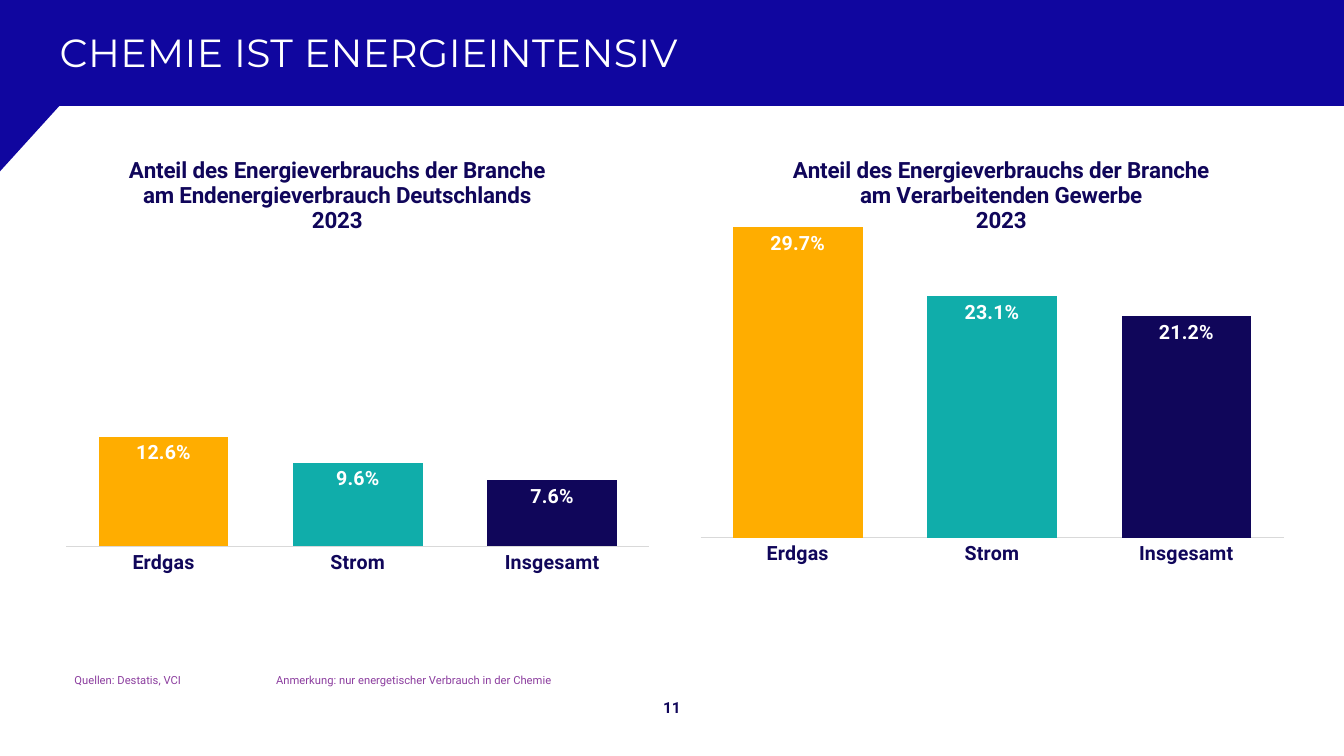
from lxml import etree
from pptx import Presentation
from pptx.chart.data import CategoryChartData
from pptx.dml.color import RGBColor
from pptx.enum.chart import XL_CHART_TYPE as ChartType
from pptx.enum.chart import XL_LABEL_POSITION as LabelPosition
from pptx.enum.chart import XL_TICK_MARK as TickMark
from pptx.enum.text import MSO_ANCHOR as Anchor
from pptx.enum.text import PP_ALIGN as Align
from pptx.oxml.ns import qn
from pptx.util import Inches, Pt

NAVY, BLUE, WHITE = "10065A", "10069F", "FFFFFF"
BAR_COLORS = ["FFAD00", "10ADAA", NAVY]
CATEGORIES = ["Erdgas", "Strom", "Insgesamt"]


def color(value):
    return RGBColor.from_string(value)


def set_layout(parent, position, **fractions):
    """Place a chart part by fractions of the chart area."""
    for old in parent.findall(qn("c:layout")):
        parent.remove(old)
    layout = etree.Element(qn("c:layout"))
    parent.insert(position, layout)
    manual = etree.SubElement(layout, qn("c:manualLayout"))
    if "w" in fractions:
        etree.SubElement(manual, qn("c:layoutTarget")).set("val", "inner")
    for side in "xy":
        etree.SubElement(manual, qn(f"c:{side}Mode")).set("val", "edge")
    for name, fraction in fractions.items():
        etree.SubElement(manual, qn(f"c:{name}")).set("val", str(fraction))


class EnergySlide:
    def __init__(self, page):
        self.page = page
        self.body_font = "Roboto"
        self.title_font = "Montserrat"

    def style(self, font, size, shade, bold=False, name=None):
        font.name = name or self.body_font
        font.size = Pt(size)
        font.bold = bold
        font.color.rgb = color(shade)

    def banner(self, points):
        corners = [(Inches(x), Inches(y)) for x, y in points]
        builder = self.page.shapes.build_freeform(*corners[0], scale=1.0)
        builder.add_line_segments(corners[1:], close=True)
        shape = builder.convert_to_shape()
        shape.shadow.inherit = False
        shape.fill.solid()
        shape.fill.fore_color.rgb = color(BLUE)
        shape.line.fill.background()
        # The banner lies behind the title
        self.page.shapes._spTree.insert(2, shape._element)

    def title(self, text, left, top, width, height):
        box = self.page.shapes.title
        box.left, box.top = Inches(left), Inches(top)
        box.width, box.height = Inches(width), Inches(height)
        frame = box.text_frame
        frame.margin_left = frame.margin_right = 0
        frame.margin_top = frame.margin_bottom = Inches(0.04)
        frame.vertical_anchor = Anchor.MIDDLE
        para = frame.paragraphs[0]
        para.text = text
        para.alignment = Align.LEFT
        self.style(para.font, 28, WHITE, name=self.title_font)
        para.font._element.set("spc", "30")

    def text(self, text, left, top, width, height, size, shade, bold=False):
        box = self.page.shapes.add_textbox(
            Inches(left), Inches(top), Inches(width), Inches(height))
        box.text_frame.word_wrap = True
        para = box.text_frame.paragraphs[0]
        para.text = text
        self.style(para.font, size, shade, bold)
        return box.text_frame

    def page_number(self, number):
        frame = self.text(number, 6.37, 6.88, 0.59, 0.28, 11, NAVY, bold=True)
        frame.margin_left = frame.margin_right = 0
        frame.margin_top = frame.margin_bottom = 0
        frame.vertical_anchor = Anchor.MIDDLE
        frame.paragraphs[0].alignment = Align.CENTER

    def chart(self, left, heading, values, heading_x, plot):
        data = CategoryChartData(number_format="0.0%")
        data.categories = CATEGORIES
        data.add_series("Series 1", values)
        chart = self.page.shapes.add_chart(
            ChartType.COLUMN_CLUSTERED, Inches(left), Inches(1.47),
            Inches(5.9), Inches(5.04), data).chart
        self.style(chart.font, 14, NAVY, bold=True)
        chart.has_legend = False
        self.chart_title(chart, heading, heading_x)
        self.axes(chart)
        self.bars(chart.plots[0])
        set_layout(chart._chartSpace.chart.plotArea, 0, **plot)

    def chart_title(self, chart, heading, x):
        frame = chart.chart_title.text_frame
        for index, line in enumerate(heading):
            para = frame.add_paragraph() if index else frame.paragraphs[0]
            para.add_run().text = line
            para.alignment = Align.CENTER
            self.style(para.font, 16, NAVY, bold=True)
        chart.chart_title.include_in_layout = False
        set_layout(chart.chart_title._element, 1, x=x, y=0.01)

    def axes(self, chart):
        shares = chart.value_axis
        shares.minimum_scale, shares.maximum_scale = -0.05, 0.3
        shares.has_major_gridlines = False
        shares.visible = False
        carriers = chart.category_axis
        carriers.major_tick_mark = carriers.minor_tick_mark = TickMark.NONE
        carriers.format.line.color.rgb = color("D9D9D9")
        carriers.format.line.width = Pt(0.75)
        self.style(carriers.tick_labels.font, 14, NAVY, bold=True)

    def bars(self, plot):
        plot.vary_by_categories = False
        plot.gap_width, plot.overlap = 50, -27
        series = plot.series[0]
        series.invert_if_negative = False
        for index, shade in enumerate(BAR_COLORS):
            fill = series.points[index].format.fill
            fill.solid()
            fill.fore_color.rgb = color(shade)
        labels = series.data_labels
        labels.show_value = True
        labels.position = LabelPosition.INSIDE_END
        labels.number_format = "0.0%"
        labels.number_format_is_linked = False
        self.style(labels.font, 14, WHITE, bold=True)


def main():
    deck = Presentation()
    deck.slide_width, deck.slide_height = Inches(13.33), Inches(7.5)
    slide = EnergySlide(deck.slides.add_slide(deck.slide_layouts[5]))

    slide.banner([(0, -0.01), (13.33, -0.01), (13.33, 1.05),
                  (0.59, 1.05), (0, 1.7)])
    slide.title("CHEMIE IST ENERGIEINTENSIV", 0.59, 0.02, 12.2, 0.98)
    slide.page_number("11")
    sources = slide.text(
        "Quellen: Destatis, VCI\t\tAnmerkung: nur energetischer Verbrauch "
        "in der Chemie", 0.64, 6.43, 7.85, 0.15, 8, "8C3E9F")
    sources.paragraphs[0].line_spacing = Pt(24)

    first_line = "Anteil des Energieverbrauchs der Branche"
    slide.chart(
        0.6, [first_line, "am Endenergieverbrauch Deutschlands", "2023"],
        [0.126, 0.096, 0.076], 0.11, dict(x=0.01, y=0.27, w=0.98, h=0.6))
    slide.chart(
        6.89, [first_line, "am Verarbeitenden Gewerbe", "2023"],
        [0.297, 0.231, 0.212], 0.16, dict(x=0.01, y=0.15, w=0.98, h=0.72))
    deck.save("out.pptx")


if __name__ == "__main__":
    main()
